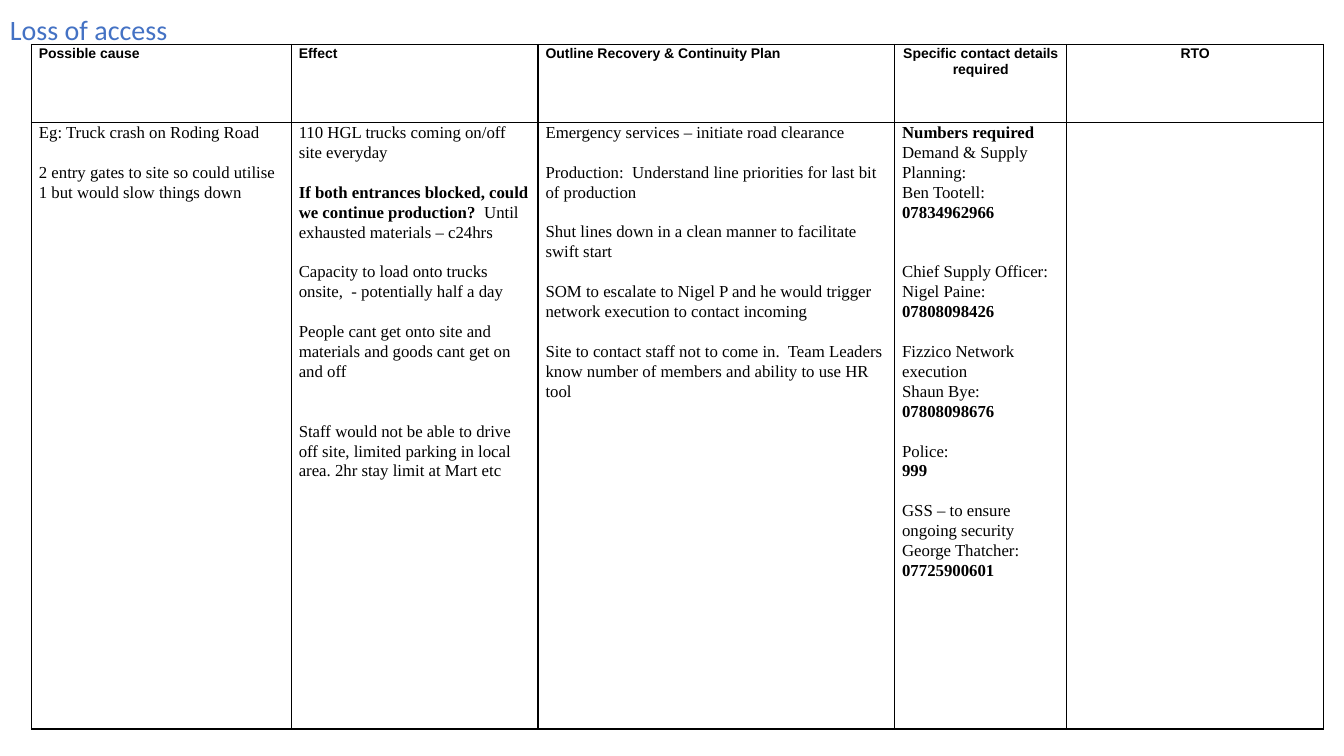
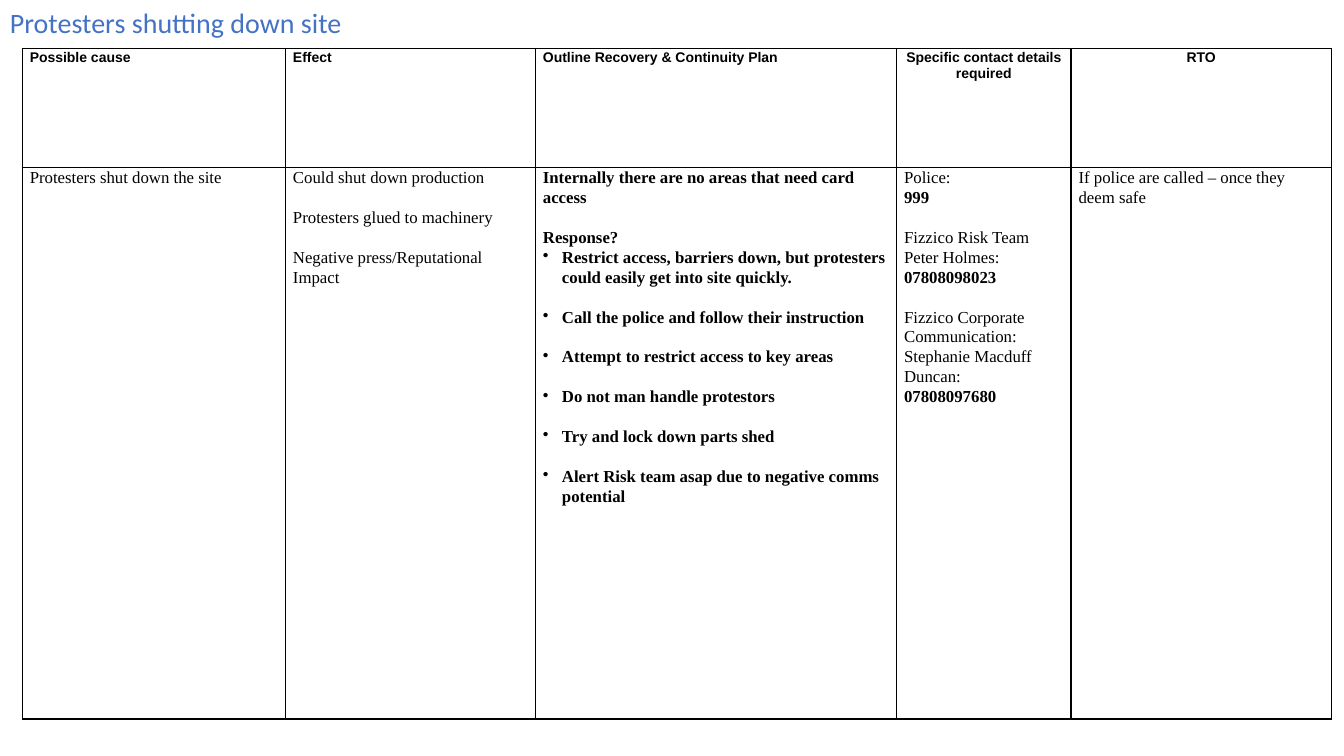
import dataclasses

import lxml.etree
import pptx
import pptx.dml.color
import pptx.enum.text
import pptx.oxml.ns
import pptx.util
from pptx.util import Cm, Pt


@dataclasses.dataclass(frozen=True)
class Theme:
    title_color: str = "4472C4"
    ink: str = "000000"
    title_font: str = "Calibri"
    header_font: str = "Arial"
    body_font: str = "Times New Roman"
    title_size: float = 20
    header_size: float = 10
    body_size: float = 12
    blank_line: float = 14.2
    border_width: float = 1


@dataclasses.dataclass(frozen=True)
class Entry:
    text: str
    bold: bool = False
    gap: int = 0
    bullet: bool = False
    plain_tail: str = ""


HEADERS = [
    "Possible cause",
    "Effect",
    "Outline Recovery & Continuity Plan",
    "Specific contact details required",
    "RTO",
]
CENTERED_COLUMNS = (3, 4)
COLUMN_SHARES = [2.58, 2.45, 3.54, 1.71, 2.55]


class PlanDeck:
    def __init__(self, theme):
        self.theme = theme
        self.deck = pptx.Presentation()
        self.deck.slide_width = Cm(33.87)
        self.deck.slide_height = Cm(19.05)
        self.page = None

    def add_page(self):
        self.page = self.deck.slides.add_slide(self.deck.slide_layouts[6])

    def set_font(self, font, name, size, color, bold=False):
        font.name = name
        font.size = Pt(size)
        font.bold = bold
        font.color.rgb = pptx.dml.color.RGBColor.from_string(color)

    def add_title(self, text, height):
        box = self.page.shapes.add_textbox(0, 0, Cm(29.21), Cm(height))
        frame = box.text_frame
        frame.word_wrap = True
        frame.vertical_anchor = pptx.enum.text.MSO_ANCHOR.MIDDLE
        para = frame.paragraphs[0]
        para.text = text
        para.line_spacing = 0.9
        self.set_font(para.font, self.theme.title_font, self.theme.title_size,
                      self.theme.title_color)

    def add_plan(self, left, top, width, row_heights, body):
        frame = self.page.shapes.add_table(
            2, len(HEADERS), Cm(left), Cm(top), Cm(width), Cm(sum(row_heights)))
        table = frame.table
        table.first_row = False
        table.horz_banding = False
        for column, share in zip(table.columns, COLUMN_SHARES):
            column.width = Cm(width * share / sum(COLUMN_SHARES))
        for row, height in zip(table.rows, row_heights):
            row.height = Cm(height)
        for index, (header, entries) in enumerate(zip(HEADERS, body)):
            self.fill_header(table.cell(0, index), header, index in CENTERED_COLUMNS)
            self.fill_body(table.cell(1, index), entries)

    def style_cell(self, cell):
        cell.margin_left = cell.margin_right = Cm(0.19)
        cell.margin_top = cell.margin_bottom = 0
        properties = cell._tc.get_or_add_tcPr()
        qn = pptx.oxml.ns.qn
        for side in ("lnL", "lnR", "lnT", "lnB"):
            line = lxml.etree.SubElement(
                properties, qn(f"a:{side}"), w=str(Pt(self.theme.border_width)))
            fill = lxml.etree.SubElement(line, qn("a:solidFill"))
            lxml.etree.SubElement(fill, qn("a:srgbClr"), val=self.theme.ink)
        cell.fill.background()

    def fill_header(self, cell, text, centered):
        self.style_cell(cell)
        para = cell.text_frame.paragraphs[0]
        para.text = text
        para.line_spacing = 1.07
        if centered:
            para.alignment = pptx.enum.text.PP_ALIGN.CENTER
        self.set_font(para.font, self.theme.header_font, self.theme.header_size,
                      self.theme.ink, bold=True)

    def fill_body(self, cell, entries):
        self.style_cell(cell)
        frame = cell.text_frame
        for index, entry in enumerate(entries):
            para = frame.add_paragraph() if index else frame.paragraphs[0]
            self.write_entry(para, entry)

    def write_entry(self, para, entry):
        para.line_spacing = 1.07
        para.space_before = Pt(entry.gap * self.theme.blank_line)
        if entry.bullet:
            self.add_bullet(para)
        span = para.add_run()
        span.text = entry.text
        bold = entry.bold
        if entry.plain_tail:
            span.font.bold = entry.bold
            tail = para.add_run()
            tail.text = entry.plain_tail
            bold = False
        self.set_font(para.font, self.theme.body_font, self.theme.body_size,
                      self.theme.ink, bold)

    def add_bullet(self, para):
        properties = para._p.get_or_add_pPr()
        indent = Cm(0.48)
        properties.set("marL", str(indent))
        properties.set("indent", str(-indent))
        lxml.etree.SubElement(properties, pptx.oxml.ns.qn("a:buChar"), char="•")


def contact(*lines, number, gap=1):
    first, *others = lines
    return [Entry(first, gap=gap), *map(Entry, others), Entry(number, bold=True)]


def spaced(first, *others):
    return [Entry(first), *(Entry(text, gap=1) for text in others)]


def bullets(first, *others):
    return [
        Entry(first, bold=True, bullet=True),
        *(Entry(text, bold=True, gap=1, bullet=True) for text in others),
    ]


ACCESS_PLAN = [
    spaced(
        "Eg: Truck crash on Roding Road",
        "2 entry gates to site so could utilise 1 but would slow things down",
    ),
    [
        Entry("110 HGL trucks coming on/off site everyday"),
        Entry("If both entrances blocked, could we continue production?  ", bold=True,
              gap=1, plain_tail="Until exhausted materials – c24hrs"),
        Entry("Capacity to load onto trucks onsite,  - potentially half a day", gap=1),
        Entry("People cant get onto site and materials and goods cant get on and off",
              gap=1),
        Entry("Staff would not be able to drive off site, limited parking in local "
              "area. 2hr stay limit at Mart etc", gap=2),
    ],
    spaced(
        "Emergency services – initiate road clearance",
        "Production:  Understand line priorities for last bit of production",
        "Shut lines down in a clean manner to facilitate swift start",
        "SOM to escalate to Nigel P and he would trigger network execution to "
        "contact incoming",
        "Site to contact staff not to come in.  Team Leaders know number of members "
        "and ability to use HR tool",
    ),
    [
        Entry("Numbers required", bold=True),
        *contact("Demand & Supply Planning:", "Ben Tootell:",
                 number="07834962966", gap=0),
        *contact("Chief Supply Officer:", "Nigel Paine:", number="07808098426", gap=2),
        *contact("Fizzico Network execution", "Shaun Bye:", number="07808098676"),
        *contact("Police:", number="999"),
        *contact("GSS – to ensure ongoing security", "George Thatcher:",
                 number="07725900601"),
    ],
    [],
]

PROTEST_PLAN = [
    [Entry("Protesters shut down the site")],
    spaced(
        "Could shut down production",
        "Protesters glued to machinery",
        "Negative press/Reputational Impact",
    ),
    [
        Entry("Internally there are no areas that need card access", bold=True),
        Entry("Response?", bold=True, gap=1),
        *bullets(
            "Restrict access, barriers down, but protesters could easily get into "
            "site quickly.",
            "Call the police and follow their instruction",
            "Attempt to restrict access to key areas",
            "Do not man handle protestors",
            "Try and lock down parts shed",
            "Alert Risk team asap due to negative comms potential",
        ),
    ],
    [
        *contact("Police:", number="999", gap=0),
        *contact("Fizzico Risk Team", "Peter Holmes:", number="07808098023"),
        *contact("Fizzico Corporate Communication:", "Stephanie Macduff Duncan:",
                 number="07808097680"),
    ],
    [Entry("If police are called – once they deem safe")],
]


def main():
    plans = PlanDeck(Theme())

    plans.add_page()
    plans.add_title("Loss of access", height=1.6)
    plans.add_plan(0.79, 1.12, 32.57, [1.96, 15.29], ACCESS_PLAN)

    plans.add_page()
    plans.add_title("Protesters shutting down site", height=1.22)
    plans.add_plan(0.56, 1.22, 32.99, [3, 13.9], PROTEST_PLAN)

    plans.deck.save("out.pptx")


if __name__ == "__main__":
    main()
